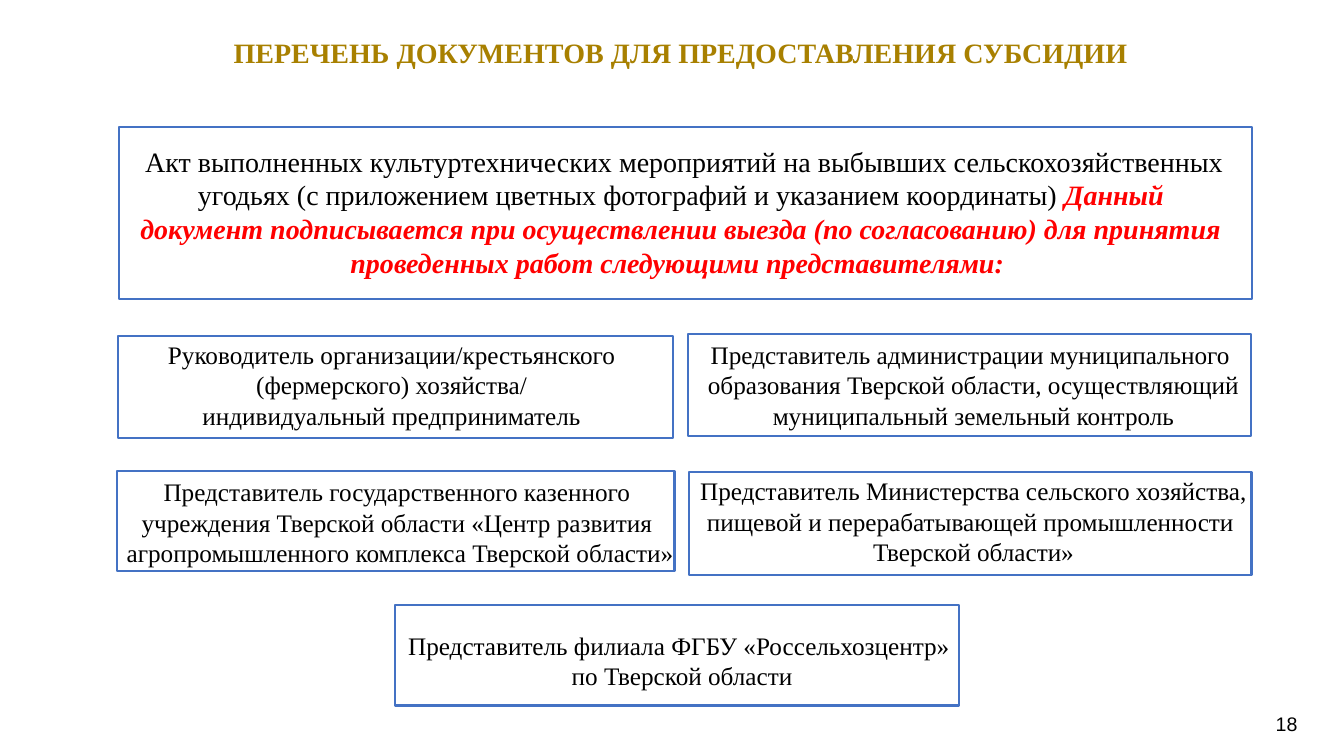
from pptx import Presentation
from pptx.dml.color import RGBColor
from pptx.enum.shapes import MSO_SHAPE
from pptx.enum.text import PP_ALIGN
from pptx.util import Cm, Pt

GOLD = RGBColor(0xA8, 0x80, 0x00)
BLUE = RGBColor(0x44, 0x72, 0xC4)
RED = RGBColor(0xFF, 0x00, 0x00)
BLACK = RGBColor(0x00, 0x00, 0x00)
SERIF = "Times New Roman"

REPRESENTATIVES = [
    ((2.97, 8.46, 14, 2.57), (3, 8.43, 13.74, 2.57), [
        "Руководитель организации/крестьянского",
        "(фермерского) хозяйства/",
        "индивидуальный предприниматель",
    ]),
    ((17.35, 8.41, 14.17, 2.57), (17.45, 8.43, 14.17, 2.57), [
        "Представитель администрации муниципального ",
        "образования Тверской области, осуществляющий",
        "муниципальный земельный контроль",
    ]),
    ((2.95, 11.86, 14.05, 2.54), (2.82, 11.89, 14.53, 2.57), [
        "Представитель государственного казенного ",
        "учреждения Тверской области «Центр развития ",
        "агропромышленного комплекса Тверской области»",
    ]),
    ((17.37, 11.89, 14.17, 2.59), (17.27, 11.86, 14.53, 2.57), [
        "Представитель Министерства сельского хозяйства,",
        "пищевой и перерабатывающей промышленности ",
        "Тверской области»",
    ]),
    ((9.96, 15.24, 14.22, 2.54), (9.96, 15.75, 14.3, 1.8), [
        "Представитель филиала ФГБУ «Россельхозцентр»",
        " по Тверской области",
    ]),
]


def add_frame(slide, place):
    frame = slide.shapes.add_shape(MSO_SHAPE.RECTANGLE, *map(Cm, place))
    frame.shadow.inherit = False
    frame.fill.background()
    frame.line.color.rgb = BLUE
    frame.line.width = Pt(1.5)


def add_text(slide, place, align=PP_ALIGN.CENTER):
    text = slide.shapes.add_textbox(*map(Cm, place)).text_frame
    text.word_wrap = True
    text.paragraphs[0].alignment = align
    return text


def add_run(paragraph, wording, size, color=BLACK, font=SERIF, bold=False, italic=False):
    run = paragraph.add_run()
    run.text = wording
    run.font.name = font
    run.font.size = Pt(size)
    run.font.color.rgb = color
    run.font.bold = bold
    run.font.italic = italic


def add_representative(slide, frame_place, text_place, lines):
    add_frame(slide, frame_place)
    text = add_text(slide, text_place)
    for index, line in enumerate(lines):
        paragraph = text.add_paragraph() if index else text.paragraphs[0]
        paragraph.alignment = PP_ALIGN.CENTER
        add_run(paragraph, line, 18)


def main():
    deck = Presentation()
    deck.slide_width, deck.slide_height = Cm(33.87), Cm(19.05)
    slide = deck.slides.add_slide(deck.slide_layouts[6])

    heading = add_text(slide, (4.83, 0.76, 24.64, 1.12)).paragraphs[0]
    add_run(heading, "ПЕРЕЧЕНЬ ДОКУМЕНТОВ ДЛЯ ПРЕДОСТАВЛЕНИЯ СУБСИДИИ", 20, GOLD, bold=True)

    add_frame(slide, (3, 3.2, 28.55, 4.34))
    act = add_text(slide, (3.23, 3.51, 27.86, 3.68)).paragraphs[0]
    add_run(act, " Акт выполненных культуртехнических мероприятий на выбывших "
                 "сельскохозяйственных угодьях (с приложением цветных фотографий "
                 "и указанием координаты) ", 20)
    add_run(act, "Данный документ подписывается при осуществлении выезда "
                 "(по согласованию) для принятия проведенных работ следующими "
                 "представителями: ", 20, RED, bold=True, italic=True)

    for frame_place, text_place, lines in REPRESENTATIVES:
        add_representative(slide, frame_place, text_place, lines)

    page_number = add_text(slide, (29.11, 17.81, 3.84, 0.84), PP_ALIGN.RIGHT).paragraphs[0]
    add_run(page_number, "18", 14, font="Arial")

    deck.save("out.pptx")


if __name__ == "__main__":
    main()
